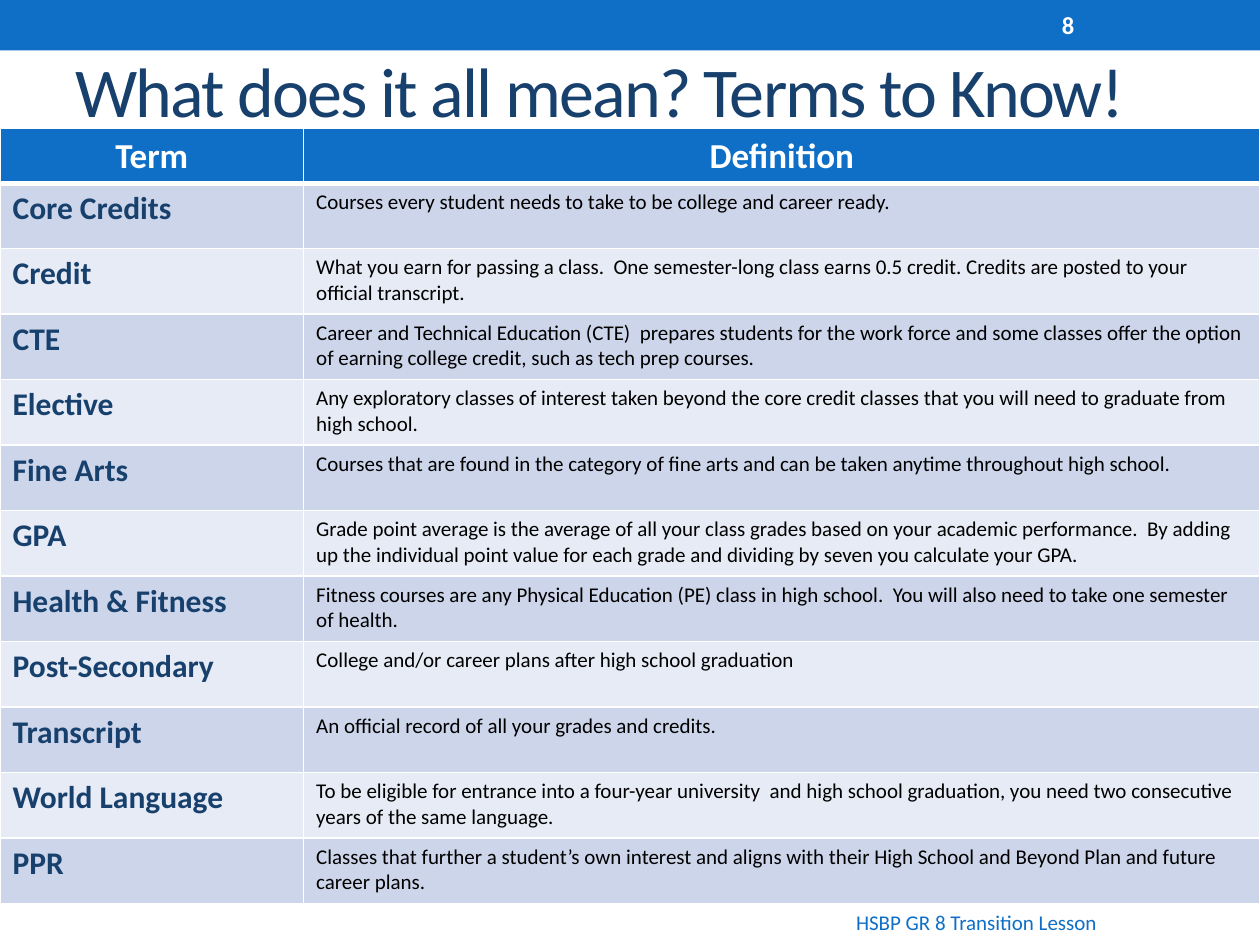
from pptx import Presentation
from pptx.dml.color import RGBColor
from pptx.enum.shapes import MSO_SHAPE
from pptx.enum.text import MSO_ANCHOR, PP_ALIGN
from pptx.oxml import parse_xml
from pptx.oxml.ns import nsdecls
from pptx.util import Inches, Pt

BLUE, NAVY, WHITE, BLACK = "0F6FC6", "17406D", "FFFFFF", "000000"
BANDS = ("CCD5EA", "E7EBF5")
HEADER_HEIGHT = 0.43
COLUMN_WIDTHS = (2.41, 7.59)
TERMS = [
    ("Core Credits", "Courses every student needs to take to be college and career ready."),
    ("Credit", "What you earn for passing a class.  One semester-long class earns 0.5 credit. "
     "Credits are posted to your official transcript."),
    ("CTE", "Career and Technical Education (CTE)  prepares students for the work force and some "
     "classes offer the option of earning college credit, such as tech prep courses."),
    ("Elective", "Any exploratory classes of interest taken beyond the core credit classes that "
     "you will need to graduate from high school."),
    ("Fine Arts", "Courses that are found in the category of fine arts and can be taken anytime "
     "throughout high school."),
    ("GPA", "Grade point average is the average of all your class grades based on your academic "
     "performance.  By adding up the individual point value for each grade and dividing by seven "
     "you calculate your GPA."),
    ("Health & Fitness", "Fitness courses are any Physical Education (PE) class in high school.  "
     "You will also need to take one semester of health."),
    ("Post-Secondary", "College and/or career plans after high school graduation"),
    ("Transcript", "An official record of all your grades and credits."),
    ("World Language", "To be eligible for entrance into a four-year university  and high school "
     "graduation, you need two consecutive years of the same language."),
    ("PPR", "Classes that further a student’s own interest and aligns with their High School and "
     "Beyond Plan and future career plans."),
]


def color(value):
    """Return the colour for a hex string."""
    return RGBColor.from_string(value)


def write(text_frame, text, size, hex_color, bold=False, align=PP_ALIGN.LEFT):
    """Fill a text frame with one styled paragraph and return it."""
    paragraph = text_frame.paragraphs[0]
    paragraph.text = text
    paragraph.alignment = align
    font = paragraph.font
    font.name, font.size, font.bold = "Calibri", Pt(size), bold
    font.color.rgb = color(hex_color)
    return paragraph


def add_text(slide, box, text, size, hex_color, **style):
    """Add a vertically centred text box and return its paragraph."""
    text_frame = slide.shapes.add_textbox(*map(Inches, box)).text_frame
    text_frame.word_wrap = True
    text_frame.vertical_anchor = MSO_ANCHOR.MIDDLE
    return write(text_frame, text, size, hex_color, **style)


def add_banner(slide, box, number):
    """Add the top bar with the slide number near its right end."""
    left, top, width, height = box
    bar = slide.shapes.add_shape(MSO_SHAPE.RECTANGLE, *map(Inches, box))
    bar.shadow.inherit = False
    bar.fill.solid()
    bar.fill.fore_color.rgb = color(BLUE)
    bar.line.fill.background()
    number_box = (left + width - 1.67, top + 0.02, 1.17, height - 0.04)
    add_text(slide, number_box, number, 14, WHITE, bold=True)


def add_title(slide, box, text):
    """Add the title with tightened letter spacing."""
    paragraph = add_text(slide, box, text, 40, NAVY)
    paragraph.runs[0]._r.get_or_add_rPr().set("spc", "-100")


def style_cell(cell, fill, top_width, bottom_width):
    """Set the white borders and the fill of a cell."""
    properties = cell._tc.get_or_add_tcPr()
    for side, width in zip("LRTB", (1, 1, top_width, bottom_width)):
        properties.append(parse_xml(
            f'<a:ln{side} {nsdecls("a")} w="{Pt(width)}"><a:solidFill>'
            f'<a:srgbClr val="{WHITE}"/></a:solidFill></a:ln{side}>'))
    cell.fill.solid()
    cell.fill.fore_color.rgb = color(fill)


def add_terms_table(slide, box, terms):
    """Add the table of terms with a header and banded rows."""
    table = slide.shapes.add_table(len(terms) + 1, 2, *map(Inches, box)).table
    for column, width in zip(table.columns, COLUMN_WIDTHS):
        column.width = Inches(width)
    row_height = (box[3] - HEADER_HEIGHT) / len(terms)
    for index, texts in enumerate([("Term", "Definition"), *terms]):
        header = index == 0
        table.rows[index].height = Inches(HEADER_HEIGHT if header else row_height)
        fill = BLUE if header else BANDS[(index - 1) % 2]
        for position, text in enumerate(texts):
            cell = table.cell(index, position)
            style_cell(cell, fill, 3 if index == 1 else 1, 3 if header else 1)
            if header:
                write(cell.text_frame, text, 20, WHITE, bold=True, align=PP_ALIGN.CENTER)
            elif position == 0:
                write(cell.text_frame, text, 18, NAVY, bold=True)
            else:
                write(cell.text_frame, text, 12, BLACK)


def main():
    """Build and save the slide."""
    presentation = Presentation()
    presentation.slide_width, presentation.slide_height = Inches(10), Inches(7.5)
    slide = presentation.slides.add_slide(presentation.slide_layouts[6])
    add_banner(slide, (0, 0, 10, 0.4), "8")
    add_title(slide, (0.5, 0, 9, 1.42), "What does it all mean? Terms to Know!")
    add_terms_table(slide, (0, 1.02, 10, 6.15), TERMS)
    add_text(slide, (5.5, 7.14, 4.5, 0.36), "HSBP GR 8 Transition Lesson", 12, BLUE,
             align=PP_ALIGN.CENTER)
    presentation.save("out.pptx")


if __name__ == "__main__":
    main()
